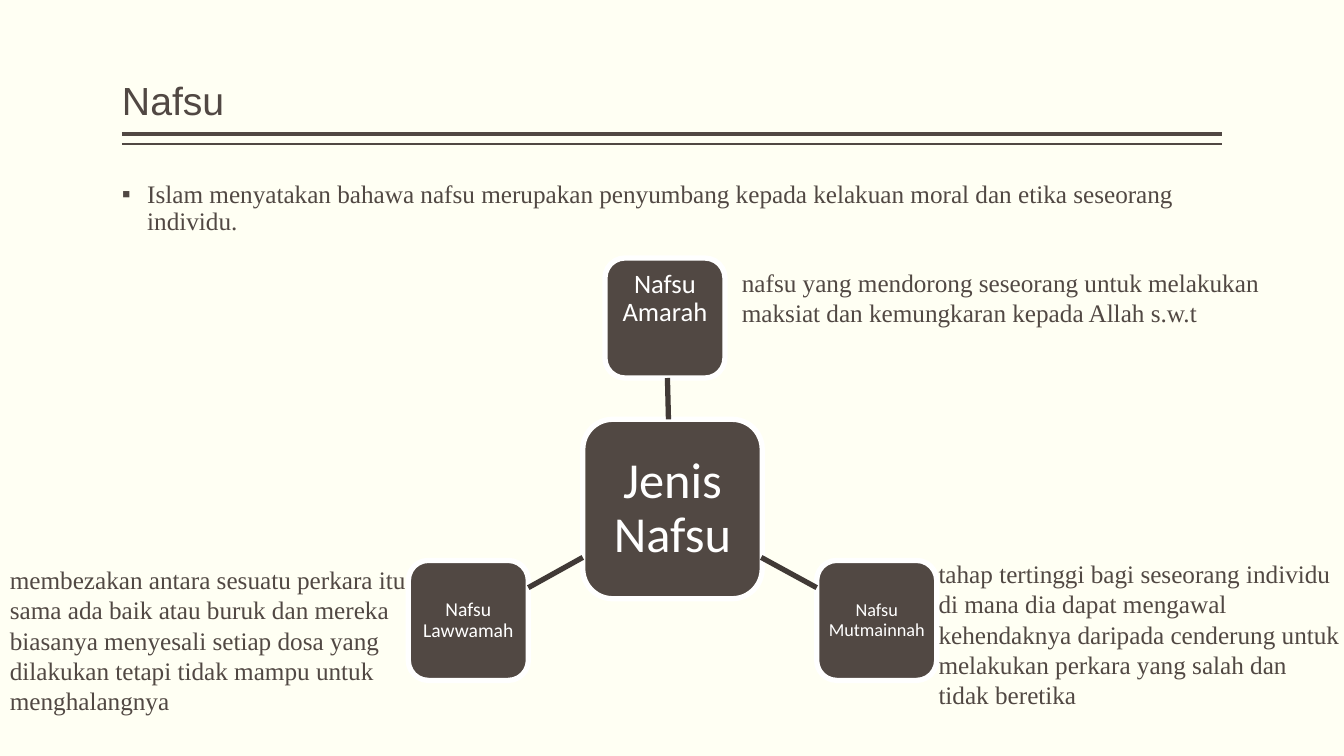
import pptx
import pptx.util
import pptx.dml.color
import pptx.enum.shapes
import pptx.enum.text
import pptx.oxml.ns
from dataclasses import dataclass
from lxml import etree
from pptx.util import Inches, Pt


@dataclass(frozen=True)
class Theme:
    background: str = "FFFFF3"
    brown: str = "514843"
    link: str = "413A36"
    white: str = "FFFFFF"
    title_font: str = "Arial"
    body_font: str = "Times New Roman"
    node_font: str = "Calibri"
    title_size: int = 28
    body_size: int = 18
    outline: float = 3.78


THEME = Theme()
WIDTH, HEIGHT = 13.33, 7.5
MARGIN = 1.21
CONTENT_WIDTH = WIDTH - 2 * MARGIN

TITLE = "Nafsu"
INTRO = ("Islam menyatakan bahawa nafsu merupakan penyumbang kepada kelakuan "
         "moral dan etika seseorang individu.")
RULES = [(1.33, 3), (1.43, 1)]  # top, weight

# text, left, top, side, type size, inset, bottom inset
NODES = [
    ("Jenis Nafsu", 5.78, 4.16, 1.78, 36, 0.1, 0.1),
    ("Nafsu Amarah", 6, 2.56, 1.19, 19, 0.05, 0.43),
    ("Nafsu Mutmainnah", 8.1, 5.56, 1.19, 13, 0.04, 0.04),
    ("Nafsu Lawwamah", 4.05, 5.56, 1.19, 14, 0.04, 0.04),
]
LINKS = [
    (6.63, 4.16, 6.62, 3.75),
    (7.55, 5.53, 8.1, 5.83),
    (5.78, 5.53, 5.24, 5.83),
]
# left, top, width, height, lines
DESCRIPTIONS = [
    (7.26, 2.6, 5.78, 0.71, [
        "nafsu yang mendorong seseorang untuk melakukan",
        "maksiat dan kemungkaran kepada Allah s.w.t",
    ]),
    (9.21, 5.49, 4.28, 1.62, [
        "tahap tertinggi bagi seseorang individu",
        "di mana dia dapat mengawal",
        "kehendaknya daripada cenderung untuk",
        "melakukan perkara yang salah dan",
        "tidak beretika",
    ]),
    (0, 5.55, 4.17, 1.62, [
        "membezakan antara sesuatu perkara itu",
        "sama ada baik atau buruk dan mereka",
        "biasanya menyesali setiap dosa yang",
        "dilakukan tetapi tidak mampu untuk",
        "menghalangnya",
    ]),
]


def color(value):
    return pptx.dml.color.RGBColor.from_string(value)


def write(shape, lines, font=THEME.body_font, size=THEME.body_size, ink=THEME.brown,
          align="LEFT", anchor="TOP", insets=(0.1, 0.05, 0.1, 0.05), spacing=1.0):
    """Fill a shape with one paragraph per line; insets run left, top, right, bottom."""
    frame = shape.text_frame
    frame.word_wrap = True
    frame.vertical_anchor = getattr(pptx.enum.text.MSO_ANCHOR, anchor)
    (frame.margin_left, frame.margin_top,
     frame.margin_right, frame.margin_bottom) = map(Inches, insets)
    for index, line in enumerate(lines):
        paragraph = frame.add_paragraph() if index else frame.paragraphs[0]
        paragraph.alignment = getattr(pptx.enum.text.PP_ALIGN, align)
        paragraph.line_spacing = spacing
        run = paragraph.add_run()
        run.text = line
        run.font.name = font
        run.font.size = Pt(size)
        run.font.color.rgb = color(ink)
    return frame


def add_text(slide, box, lines, **style):
    return write(slide.shapes.add_textbox(*map(Inches, box)), lines, **style)


def add_bullet(paragraph, symbol, indent):
    properties = paragraph._p.get_or_add_pPr()
    properties.set("marL", str(Inches(indent)))
    properties.set("indent", str(-Inches(indent)))
    for tag, name, value in (("a:buFont", "typeface", THEME.title_font),
                             ("a:buChar", "char", symbol)):
        etree.SubElement(properties, pptx.oxml.ns.qn(tag)).set(name, value)


def add_line(slide, ends, ink, weight):
    line = slide.shapes.add_connector(
        pptx.enum.shapes.MSO_CONNECTOR.STRAIGHT, *map(Inches, ends))
    line.line.color.rgb = color(ink)
    line.line.width = Pt(weight)
    etree.SubElement(line._element.spPr, pptx.oxml.ns.qn("a:effectLst"))


def add_node(slide, text, left, top, side, size, inset, bottom):
    node = slide.shapes.add_shape(pptx.enum.shapes.MSO_SHAPE.ROUNDED_RECTANGLE,
                                  *map(Inches, (left, top, side, side)))
    node.shadow.inherit = False
    node.fill.solid()
    node.fill.fore_color.rgb = color(THEME.brown)
    node.line.color.rgb = color(THEME.white)
    node.line.width = Pt(THEME.outline)
    write(node, [text], font=THEME.node_font, size=size, ink=THEME.white,
          align="CENTER", anchor="MIDDLE", insets=(inset, inset, inset, bottom), spacing=0.9)


def main():
    presentation = pptx.Presentation()
    presentation.slide_width = Inches(WIDTH)
    presentation.slide_height = Inches(HEIGHT)
    slide = presentation.slides.add_slide(presentation.slide_layouts[6])
    slide.background.fill.solid()
    slide.background.fill.fore_color.rgb = color(THEME.background)

    for top, weight in RULES:
        add_line(slide, (MARGIN, top, WIDTH - MARGIN, top), THEME.brown, weight)
    flush = (0, 0.05, 0, 0.05)
    add_text(slide, (MARGIN, 0.08, CONTENT_WIDTH, 1.2), [TITLE], font=THEME.title_font,
             size=THEME.title_size, anchor="BOTTOM", insets=flush, spacing=0.9)
    intro = add_text(slide, (MARGIN, 1.75, CONTENT_WIDTH, 5), [INTRO],
                     insets=flush, spacing=0.9)
    add_bullet(intro.paragraphs[0], "▪", 0.25)

    for node in NODES:
        add_node(slide, *node)
    for ends in LINKS:
        add_line(slide, ends, THEME.link, THEME.outline)
    for *box, lines in DESCRIPTIONS:
        add_text(slide, box, lines)

    presentation.save("out.pptx")


if __name__ == "__main__":
    main()
